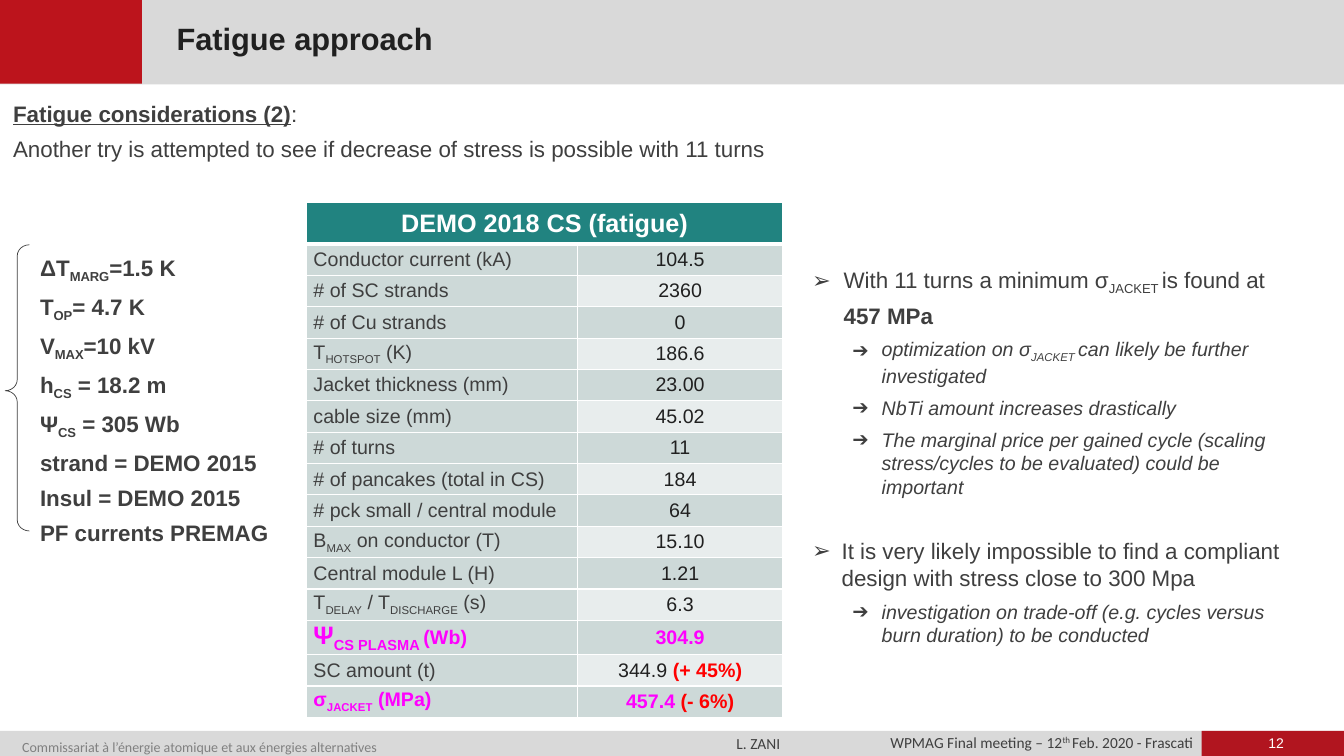
"""Build the fatigue approach slide with its conductor table and findings."""
from dataclasses import dataclass, replace
from typing import Any, Optional, Union

from lxml.etree import SubElement
from pptx import Presentation
from pptx.dml.color import RGBColor
from pptx.enum.shapes import MSO_SHAPE as Shape
from pptx.enum.text import MSO_ANCHOR as Anchor, PP_ALIGN as Align
from pptx.oxml import parse_xml
from pptx.oxml.ns import nsdecls, qn
from pptx.util import Cm, Pt


@dataclass(frozen=True)
class Theme:
    font: str = "Arial"
    footer_font: str = "Calibri"
    red: str = "BC141C"
    footer_red: str = "B1151F"
    bar: str = "D9D9D9"
    text: str = "3F3F3F"
    dark: str = "202020"
    muted: str = "808080"
    white: str = "FFFFFF"
    teal: str = "218380"
    band: str = "CDD9D8"
    light: str = "E8EDED"
    magenta: str = "FF00FF"
    alert: str = "FF0000"
    title: int = 22
    header: int = 18
    body: int = 16
    detail: int = 14
    footer: int = 11
    small: int = 10


T = Theme()


@dataclass(frozen=True)
class Style:
    size: int = T.body
    color: str = T.text
    bold: bool = False
    italic: bool = False
    underline: bool = False
    font: str = T.font
    shift: int = -25


@dataclass(frozen=True)
class Span:
    """Text whose parts between bars are shifted off the baseline."""
    text: str
    style: Style


@dataclass(frozen=True)
class Para:
    spans: tuple[Span, ...]
    align: Align = Align.LEFT
    spacing: Optional[Union[float, Pt]] = None
    before: float = 0
    bullet: str = ""
    margin: float = 0
    hang: float = 0
    level: int = 0


@dataclass(frozen=True)
class Box:
    at: tuple[float, float, float, float]
    paras: tuple[Para, ...]
    inset: tuple[float, float] = (0.25, 0.13)
    anchor: Anchor = Anchor.TOP
    wrap: bool = True


@dataclass(frozen=True)
class Bar:
    at: tuple[float, float, float, float]
    color: str


@dataclass(frozen=True)
class Row:
    label: tuple[Span, ...]
    value: tuple[Span, ...]


BODY = Style()
STRONG = replace(BODY, bold=True)
DETAIL = replace(BODY, size=T.detail, italic=True)
LABEL = replace(BODY, size=T.detail)
VALUE = replace(LABEL, color=T.dark)
KEY = replace(LABEL, color=T.magenta, bold=True)
BIG_KEY = replace(KEY, size=T.header)
CHANGE = replace(KEY, color=T.alert)
HEADER = Style(T.header, T.white, bold=True)
FOOTER = Style(T.footer, font=T.footer_font, shift=30)


def plain_row(label: str, value: str) -> Row:
    return Row((Span(label, LABEL),), (Span(value, VALUE),))


def point(*spans: Span, spacing: Optional[Pt] = None, before: float = 6,
          margin: float = 0.79) -> Para:
    return Para(spans, spacing=spacing, before=before, bullet="➢", margin=margin, hang=margin)


def subpoint(text: str) -> Para:
    return Para((Span(text, DETAIL),), before=6, bullet="➔", margin=1.75, hang=0.74, level=1)


BARS = (
    Bar((0, 18.42, 33.87, 0.63), T.bar),
    Bar((0, 0, 33.87, 2.13), T.bar),
    Bar((30.28, 18.42, 3.59, 0.63), T.footer_red),
    Bar((0, 0, 3.58, 2.11), T.red),
)
PARAMETERS = ("ΔT|MARG|=1.5 K", "T|OP|= 4.7 K", "V|MAX|=10 kV", "h|CS| = 18.2 m",
              "Ψ|CS| = 305 Wb", "strand = DEMO 2015", "Insul = DEMO 2015", "PF currents PREMAG")
FINDINGS = (
    point(Span("With 11 turns a minimum σ|JACKET |is found at ", BODY), Span("457 MPa", STRONG),
          spacing=Pt(23), before=0),
    subpoint("optimization on σ|JACKET |can likely be further investigated"),
    subpoint("NbTi amount increases drastically"),
    subpoint("The marginal price per gained cycle (scaling stress/cycles to be evaluated) "
             "could be important"),
    point(Span("It is very likely impossible to find a compliant design with stress close to "
               "300 Mpa", BODY), before=28, margin=0.74),
    subpoint("investigation on trade-off (e.g. cycles versus burn duration) to be conducted"),
)
BOXES = (
    Box((21.79, 18.52, 8.48, 0.43), (Para((Span(
        "WPMAG Final meeting – 12|th |Feb. 2020 - Frascati", FOOTER),), Align.RIGHT, 0.9),), (0.2, 0)),
    Box((0.36, 18.44, 15.32, 0.53), (Para((Span(
        "Commissariat à l’énergie atomique et aux énergies alternatives",
        replace(FOOTER, size=T.small, color=T.muted)),), spacing=1.4),), (0.2, 0)),
    Box((18.36, 18.49, 1.52, 0.48), (Para((Span("L. ZANI", FOOTER),)),), (0.2, 0), wrap=False),
    Box((4.09, 0.53, 16.28, 1.04), (Para((Span(
        "Fatigue approach", Style(T.title, T.dark, bold=True)),), spacing=0.8),),
        (0.36, 0.13), Anchor.MIDDLE),
    Box((30.99, 18.52, 2.34, 0.43),
        (Para((Span("12", Style(T.small, T.white)),), Align.CENTER),), (0.2, 0)),
    Box((0.08, 2.18, 33.32, 2.03), (
        Para((Span("Fatigue considerations (2)", replace(STRONG, underline=True)),
              Span(":", BODY)), Align.JUSTIFY, Pt(25)),
        Para((Span("Another try is attempted to see if decrease of stress is possible with "
                   "11 turns", BODY),), Align.JUSTIFY, Pt(25)))),
    Box((0.76, 6.27, 6.71, 7.21), tuple(
        Para((Span(text, STRONG),), before=6 if i else 0) for i, text in enumerate(PARAMETERS))),
    Box((20.22, 6.53, 12.85, 9.93), FINDINGS),
)
ROWS = (
    plain_row("Conductor current (kA)", "104.5"),
    plain_row("# of SC strands", "2360"),
    plain_row("# of Cu strands", "0"),
    plain_row("T|HOTSPOT| (K)", "186.6"),
    plain_row("Jacket thickness (mm)", "23.00"),
    plain_row("cable size (mm)", "45.02"),
    plain_row("# of turns", "11"),
    plain_row("# of pancakes (total in CS)", "184"),
    plain_row("# pck small / central module", "64"),
    plain_row("B|MAX| on conductor (T)", "15.10"),
    plain_row("Central module L (H)", "1.21"),
    plain_row("T|DELAY| / T|DISCHARGE| (s)", "6.3"),
    Row((Span("Ψ|CS PLASMA |", BIG_KEY), Span("(Wb)", KEY)), (Span("304.9", KEY),)),
    Row((Span("SC amount (t)", LABEL),), (Span("344.9 ", VALUE), Span("(+ 45%)", CHANGE))),
    Row((Span("σ|JACKET| (MPa)", KEY),), (Span("457.4 ", KEY), Span("(- 6%)", CHANGE))),
)


def write_span(p: Any, span: Span) -> None:
    for i, text in enumerate(span.text.split("|")):
        if not text:
            continue
        r = p.add_run()
        r.text = text
        f, st = r.font, span.style
        f.name, f.size, f.bold, f.italic = st.font, Pt(st.size), st.bold, st.italic
        f.underline = st.underline
        f.color.rgb = RGBColor.from_string(st.color)
        if i % 2:
            r._r.get_or_add_rPr().set("baseline", str(st.shift * 1000))


def write_paras(tf: Any, paras: tuple[Para, ...]) -> None:
    for i, para in enumerate(paras):
        p = tf.add_paragraph() if i else tf.paragraphs[0]
        if para.bullet:
            pPr = p._p.get_or_add_pPr()
            pPr.set("marL", str(Cm(para.margin)))
            pPr.set("indent", str(-Cm(para.hang)))
            SubElement(pPr, qn("a:buFont"), typeface=T.font)
            SubElement(pPr, qn("a:buChar"), char=para.bullet)
        p.alignment, p.level = para.align, para.level
        p.line_spacing, p.space_before = para.spacing, Pt(para.before)
        for span in para.spans:
            write_span(p, span)


def add_box(s: Any, box: Box) -> None:
    tf = s.shapes.add_textbox(*map(Cm, box.at)).text_frame
    tf.word_wrap, tf.vertical_anchor = box.wrap, box.anchor
    tf.margin_left = tf.margin_right = Cm(box.inset[0])
    tf.margin_top = tf.margin_bottom = Cm(box.inset[1])
    write_paras(tf, box.paras)


def add_bar(s: Any, bar: Bar) -> None:
    sp = s.shapes.add_shape(Shape.RECTANGLE, *map(Cm, bar.at))
    sp.shadow.inherit = False
    sp.fill.solid()
    sp.fill.fore_color.rgb = RGBColor.from_string(bar.color)
    sp.line.fill.background()


def add_brace(s: Any) -> None:
    sp = s.shapes.add_shape(Shape.LEFT_BRACE, Cm(0.13), Cm(6.17), Cm(0.61), Cm(7.21))
    sp.shadow.inherit = False
    sp.adjustments[0], sp.adjustments[1] = 0.46, 0.51
    sp.fill.background()
    sp.line.color.rgb = RGBColor.from_string(T.text)
    sp.line.width = Pt(0.5)


def fill_cell(cell: Any, para: Para, color: str, inset: float, top: int = 1, bottom: int = 1) -> None:
    cell.margin_left = cell.margin_right = Cm(inset)
    cell.margin_top = cell.margin_bottom = 0
    cell.vertical_anchor = Anchor.MIDDLE
    cell.fill.solid()
    cell.fill.fore_color.rgb = RGBColor.from_string(color)
    tcPr = cell._tc.get_or_add_tcPr()
    for i, (side, width) in enumerate((("L", 1), ("R", 1), ("T", top), ("B", bottom))):
        tcPr.insert(i, parse_xml(
            f'<a:ln{side} {nsdecls("a")} w="{Pt(width)}"><a:solidFill>'
            f'<a:srgbClr val="{T.white}"/></a:solidFill></a:ln{side}>'))
    write_paras(cell.text_frame, (para,))


def add_conductor_table(s: Any) -> None:
    widths, heights = (6.83, 5.18), (1.04,) + (0.79,) * len(ROWS)
    table = s.shapes.add_table(len(heights), 2, Cm(7.72), Cm(5.11),
                               Cm(sum(widths)), Cm(sum(heights))).table
    table.first_row = table.horz_banding = False
    for column, width in zip(table.columns, widths):
        column.width = Cm(width)
    for line, height in zip(table.rows, heights):
        line.height = Cm(height)
    table.cell(0, 0).merge(table.cell(0, 1))
    fill_cell(table.cell(0, 0), Para((Span("DEMO 2018 CS (fatigue)", HEADER),), Align.CENTER),
              T.teal, 0.18, bottom=3)
    for i, row in enumerate(ROWS, 1):
        top = 3 if i == 1 else 1
        fill_cell(table.cell(i, 0), Para(row.label), T.band, 0.18, top)
        fill_cell(table.cell(i, 1), Para(row.value, Align.CENTER),
                  T.band if i % 2 else T.light, 0, top)


def main() -> None:
    prs = Presentation()
    prs.slide_width, prs.slide_height = Cm(33.87), Cm(19.05)
    s = prs.slides.add_slide(prs.slide_layouts[6])
    for bar in BARS:
        add_bar(s, bar)
    for box in BOXES:
        add_box(s, box)
    add_conductor_table(s)
    add_brace(s)
    prs.save("out.pptx")


if __name__ == "__main__":
    main()
